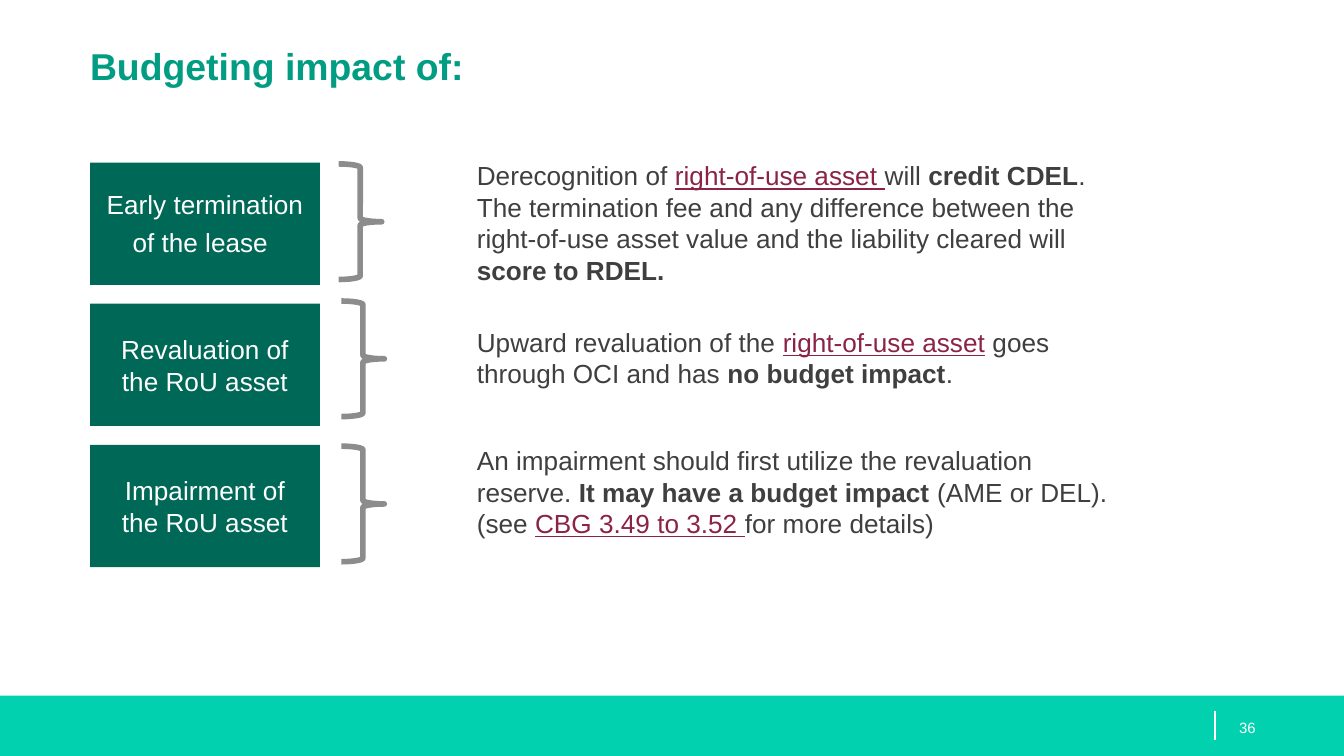
import pptx
import pptx.util
import pptx.dml.color
import pptx.enum.shapes
import pptx.enum.text
from lxml import etree

Inches, Pt = pptx.util.Inches, pptx.util.Pt
MSO = pptx.enum.shapes.MSO_SHAPE
ALIGN = pptx.enum.text.PP_ALIGN
ANCHOR = pptx.enum.text.MSO_ANCHOR
FIT = pptx.enum.text.MSO_AUTO_SIZE

# Content: runs are (text, style)
TITLE = [("Budgeting impact of:", "title")]
PAGE = [("36", "page")]
EVENTS = [
    {"label": [("Early termination of the lease", "label"), (" ", "gap")],
     "impact": [("Derecognition of ", "body"), ("right-of-use asset ", "link"),
                ("will ", "body"), ("credit CDEL", "strong"),
                (". The termination fee and any difference between the "
                 "right-of-use asset value and the liability cleared will ", "body"),
                ("score to RDEL.", "strong")],
     "brace": (2.52, 1.22), "text": (1.14, 1.28)},
    {"label": [("Revaluation of the RoU asset", "label")],
     "impact": [("Upward revaluation of the ", "body"), ("right-of-use asset", "link"),
                (" goes through OCI and has ", "body"),
                ("no budget impact", "strong"), (".", "body")],
     "brace": (2.54, 2.24), "text": (2.38, 0.57)},
    {"label": [("Impairment of the RoU asset", "label")],
     "impact": [("An impairment should first utilize the revaluation reserve. ", "body"),
                ("It may have a budget impact ", "strong"),
                ("(AME or DEL). (see ", "body"), ("CBG 3.49 to 3.52 ", "link"),
                ("for more details)", "body")],
     "brace": (2.54, 3.32), "text": (3.26, 0.81)},
]

# Theme
THEME = {
    "font": "Arial",
    "fills": {"footer": "01D1AE", "card": "006857"},
    "lines": {"brace": ("8C8C8C", 3), "divider": ("FFFFFF", 0.75)},
    "text": {
        "title": {"size": 20, "color": "019D82", "bold": True},
        "page": {"size": 8, "color": "FFFFFF"},
        "label": {"size": 14, "color": "FFFFFF"},
        "gap": {"size": 18, "color": "FFFFFF"},
        "body": {"size": 14, "color": "3F3F3F"},
        "strong": {"size": 14, "color": "3F3F3F", "bold": True},
        "link": {"size": 14, "color": "8B2346", "underline": True},
    },
}

# Layout: a 16:9 slide
SLIDE_W = 10
SLIDE_H = SLIDE_W * 9 / 16
FOOTER_H = 0.45
LEFT = 0.67
CARD_TOP, CARD_GAP, CARD_W, CARD_H = 1.21, 0.14, 1.71, 0.91
BRACE_W, BRACE_H = 0.32, 0.86
TEXT_LEFT, TEXT_W = 3.45, 5.07


def rgb(value):
    return pptx.dml.color.RGBColor.from_string(value)


def box(*at):
    return [Inches(v) for v in at]


def set_line(line, name):
    color, width = THEME["lines"][name]
    line.color.rgb = rgb(color)
    line.width = Pt(width)


def write(sp, runs, align=ALIGN.LEFT, **frame):
    tf = sp.text_frame
    for name, value in {"word_wrap": True, **frame}.items():
        setattr(tf, name, value)
    p = tf.paragraphs[0]
    p.alignment = align
    for text, style in runs:
        r = p.add_run()
        r.text = text
        fmt = dict(THEME["text"][style], name=THEME["font"])
        r.font.color.rgb = rgb(fmt.pop("color"))
        fmt["size"] = Pt(fmt["size"])
        for name, value in fmt.items():
            setattr(r.font, name, value)


def add_rect(s, at, fill):
    sp = s.shapes.add_shape(MSO.RECTANGLE, *box(*at))
    sp.shadow.inherit = False
    sp.fill.solid()
    sp.fill.fore_color.rgb = rgb(THEME["fills"][fill])
    sp.line.fill.background()
    return sp


prs = pptx.Presentation()
prs.slide_width, prs.slide_height = box(SLIDE_W, SLIDE_H)
s = prs.slides.add_slide(prs.slide_layouts[6])
no_margins = dict.fromkeys(
    ("margin_left", "margin_top", "margin_right", "margin_bottom"), 0)

# Footer with divider and page number
add_rect(s, (0, SLIDE_H - FOOTER_H, SLIDE_W, FOOTER_H), "footer")
divider = s.shapes.add_connector(
    pptx.enum.shapes.MSO_CONNECTOR.STRAIGHT, *box(9.04, 5.29, 9.04, 5.51))
set_line(divider.line, "divider")
etree.SubElement(divider._element.spPr, pptx.oxml.ns.qn("a:effectLst"))
write(s.shapes.add_textbox(*box(9.02, 5.19, 0.75, 0.44)), PAGE,
      vertical_anchor=ANCHOR.MIDDLE, **{**no_margins, "margin_left": Inches(0.2)})

# Title
write(s.shapes.add_textbox(*box(LEFT, 0.32, 8.66, 0.72)), TITLE, **no_margins)

# One row per event: card, brace, budget impact
for i, event in enumerate(EVENTS):
    card_top = CARD_TOP + i * (CARD_H + CARD_GAP)
    card = add_rect(s, (LEFT, card_top, CARD_W, CARD_H), "card")
    write(card, event["label"], ALIGN.CENTER, vertical_anchor=ANCHOR.MIDDLE)

    brace = s.shapes.add_shape(
        MSO.RIGHT_BRACE, *box(*event["brace"], BRACE_W, BRACE_H))
    brace.shadow.inherit = False
    brace.fill.background()
    set_line(brace.line, "brace")

    top, height = event["text"]
    write(s.shapes.add_textbox(*box(TEXT_LEFT, top, TEXT_W, height)),
          event["impact"], auto_size=FIT.SHAPE_TO_FIT_TEXT)

prs.save("out.pptx")
